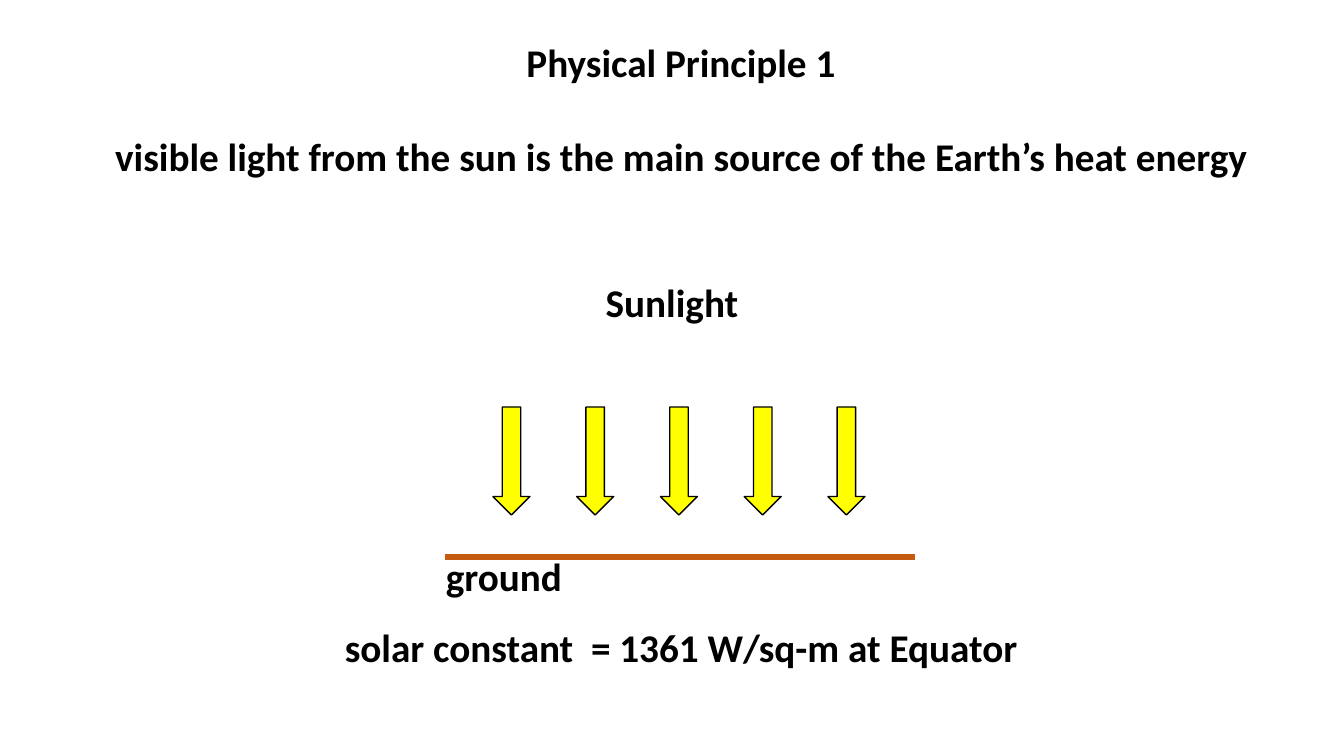
from lxml.etree import SubElement
from pptx import Presentation
from pptx.dml.color import RGBColor
from pptx.enum.shapes import MSO_CONNECTOR, MSO_SHAPE
from pptx.enum.text import MSO_ANCHOR, MSO_AUTO_SIZE, PP_ALIGN
from pptx.oxml.ns import qn
from pptx.util import Emu, Pt

EMU_PER_PX = 914400 / 100.8
BLACK, SUN_YELLOW, GROUND_BROWN = "000000", "FFFF00", "C55A11"
ARROW_COUNT, ARROW_WIDTH = 5, 37


def px(length):
    """Turn a length in px into EMU."""
    return Emu(round(length * EMU_PER_PX))


def color(hex_string):
    """Turn a hex string into a colour."""
    return RGBColor.from_string(hex_string)


def place(shape, box):
    """Move and size a shape to a box of left, top, width and height."""
    shape.left, shape.top, shape.width, shape.height = map(px, box)


def write_text(shape, *lines, size=28, bold=True, font="Calibri", hex_color=BLACK,
               align=PP_ALIGN.CENTER, gap=0):
    """Write one paragraph per line, with a gap in points between them."""
    frame = shape.text_frame
    frame.word_wrap = True
    frame.auto_size = MSO_AUTO_SIZE.NONE
    frame.vertical_anchor = MSO_ANCHOR.TOP
    for index, line in enumerate(lines):
        paragraph = frame.add_paragraph() if index else frame.paragraphs[0]
        paragraph.alignment = align
        paragraph.space_before = Pt(gap if index else 0)
        run = paragraph.add_run()
        run.text = line
        run.font.size, run.font.bold, run.font.name = Pt(size), bold, font
        run.font.color.rgb = color(hex_color)


def add_title(slide, box):
    """Fill the title with the principle's number and statement."""
    place(slide.shapes.title, box)
    write_text(slide.shapes.title, "Physical Principle 1",
               "visible light from the sun is the main source of the Earth’s heat energy",
               gap=34)


def add_label(slide, box, text, **text_format):
    """Add a text box with one line."""
    write_text(slide.shapes.add_textbox(*map(px, box)), text, **text_format)


def add_sun_arrows(slide, box):
    """Spread the sunlight arrows evenly across the box."""
    left, top, width, height = box
    step = (width - ARROW_WIDTH) / (ARROW_COUNT - 1)
    for index in range(ARROW_COUNT):
        arrow_box = (left + index * step, top, ARROW_WIDTH, height)
        arrow = slide.shapes.add_shape(MSO_SHAPE.DOWN_ARROW, *map(px, arrow_box))
        arrow.shadow.inherit = False
        arrow.fill.solid()
        arrow.fill.fore_color.rgb = color(SUN_YELLOW)
        arrow.line.color.rgb = color(BLACK)
        arrow.line.width = Pt(1)


def add_ground(slide, box):
    """Draw the ground line along the top of the box, with its name below."""
    left, top, width, height = box
    ground = slide.shapes.add_connector(
        MSO_CONNECTOR.STRAIGHT, px(left + width), px(top), px(left), px(top))
    ground.line.color.rgb = color(GROUND_BROWN)
    ground.line.width = Pt(4.5)
    SubElement(ground._element.spPr, qn("a:effectLst"))
    add_label(slide, (left - 9, top - 10, 152, height), "ground", align=PP_ALIGN.LEFT)


def main():
    """Build the slide and save it."""
    presentation = Presentation()
    presentation.slide_width, presentation.slide_height = px(1344), px(756)
    slide = presentation.slides.add_slide(presentation.slide_layouts[5])
    add_title(slide, (86, 33, 1190, 201))
    add_sun_arrows(slide, (493, 407, 372, 108))
    add_label(slide, (77, 273, 1190, 105), "Sunlight")
    add_label(slide, (86, 618, 1190, 105), "solar constant  = 1361 W/sq-m at Equator")
    add_ground(slide, (445, 557, 470, 105))
    presentation.save("out.pptx")


if __name__ == "__main__":
    main()
